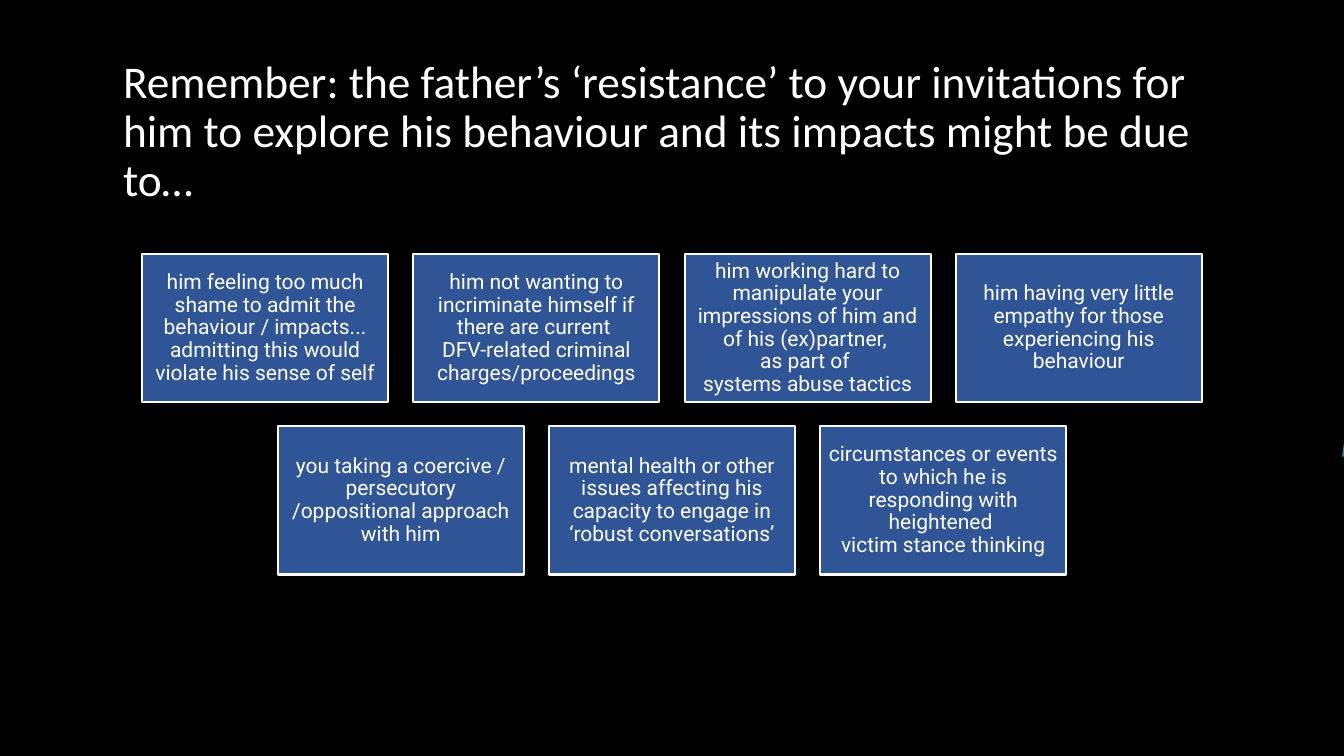
import copy

from pptx import Presentation
from pptx import util as u
from pptx.dml.color import RGBColor
from pptx.enum import shapes, text
from pptx.oxml.ns import qn

COLOURS = {"background": "000000", "words": "FFFFFF", "box": "2F5597", "accent": "2C7E9E"}
RGB = {part: RGBColor.from_string(value) for part, value in COLOURS.items()}

deck = Presentation()
deck.slide_width, deck.slide_height = u.Inches(13.33), u.Inches(7.5)
slide = deck.slides.add_slide(deck.slide_layouts[5])
slide.background.fill.solid()
slide.background.fill.fore_color.rgb = RGB["background"]


def write(frame, words, frame_format, align, font_name, size):
    """Fill a text frame with one formatted paragraph."""
    for name, value in frame_format.items():
        setattr(frame, name, value)
    paragraph = frame.paragraphs[0]
    paragraph.text = words
    paragraph.alignment = align
    paragraph.line_spacing = 0.9
    for run in paragraph.runs:
        for name, value in {"name": font_name, "size": u.Pt(size)}.items():
            setattr(run.font, name, value)
        run.font.color.rgb = RGB["words"]
    # Line breaks take the size of the text around them
    run_format = paragraph.runs[0]._r.find(qn("a:rPr"))
    for line_break in paragraph._p.findall(qn("a:br")):
        line_break.append(copy.deepcopy(run_format))


# Title
title = slide.shapes.title
title_place = {"left": 1.12, "top": 0.54, "width": 11.44, "height": 1.2}
for name, value in title_place.items():
    setattr(title, name, u.Inches(value))
title_format = {
    "word_wrap": True,
    "auto_size": text.MSO_AUTO_SIZE.NONE,
    "vertical_anchor": text.MSO_ANCHOR.TOP,
}
write(
    title.text_frame,
    "Remember: the father’s ‘resistance’ to your invitations for him to explore "
    "his behaviour and its impacts might be due to…",
    title_format, text.PP_ALIGN.LEFT, "Calibri", 32.4,
)

# Accent at the right edge
accent = slide.shapes.add_shape(
    shapes.MSO_SHAPE.ISOSCELES_TRIANGLE,
    u.Inches(13.31), u.Inches(4.39), u.Inches(0.02), u.Inches(0.14),
)
accent.adjustments[0] = 1
accent.shadow.inherit = False
accent.fill.solid()
accent.fill.fore_color.rgb = RGB["accent"]
accent.line.fill.background()

# Reasons, in two centred rows of boxes
reason_rows = [
    [
        "him feeling too much shame to admit the behaviour / impacts... "
        "admitting this would violate his sense of self",
        "him not wanting to incriminate himself if there are current \n"
        "DFV-related criminal charges/proceedings",
        "him working hard to manipulate your impressions of him and of his (ex)partner, \n"
        "as part of \nsystems abuse tactics",
        "him having very little empathy for those experiencing his behaviour",
    ],
    [
        "you taking a coercive / persecutory /oppositional approach with him",
        "mental health or other issues affecting his capacity to engage in "
        "‘robust conversations’",
        "circumstances or events to which he is responding with heightened \n"
        "victim stance thinking",
    ],
]
BOX_WIDTH, BOX_HEIGHT = 2.44, 1.47
COLUMN_STEP, ROW_STEP = 2.69, 1.71
CENTRE, FIRST_TOP = 6.665, 2.52
reason_format = {
    "word_wrap": True,
    "vertical_anchor": text.MSO_ANCHOR.MIDDLE,
    **{f"margin_{side}": u.Inches(0.06) for side in ("left", "top", "right", "bottom")},
}
for row, reasons in enumerate(reason_rows):
    row_left = CENTRE - ((len(reasons) - 1) * COLUMN_STEP + BOX_WIDTH) / 2
    for column, reason in enumerate(reasons):
        box = slide.shapes.add_shape(
            shapes.MSO_SHAPE.RECTANGLE,
            u.Inches(row_left + column * COLUMN_STEP),
            u.Inches(FIRST_TOP + row * ROW_STEP),
            u.Inches(BOX_WIDTH), u.Inches(BOX_HEIGHT),
        )
        box.shadow.inherit = False
        box.fill.solid()
        box.fill.fore_color.rgb = RGB["box"]
        box.line.color.rgb = RGB["words"]
        box.line.width = u.Pt(1.5)
        write(box.text_frame, reason, reason_format, text.PP_ALIGN.CENTER, "Roboto", 15)

deck.save("out.pptx")
